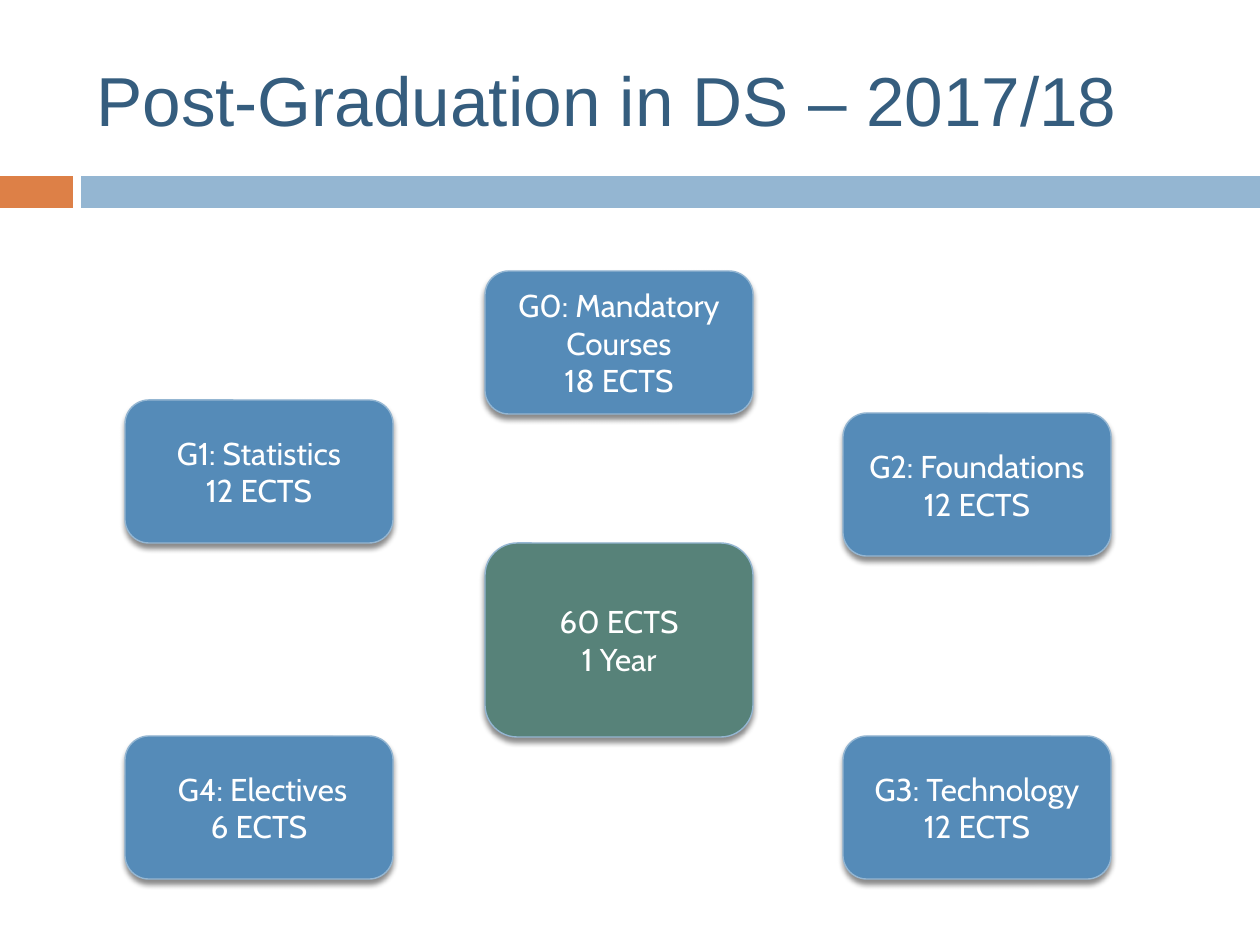
import lxml.etree
import pptx
import pptx.dml.color
import pptx.enum.shapes
import pptx.enum.text
import pptx.oxml.ns
import pptx.util

PX = 914400 / 126
SLIDE_SIZE = (1260, 945)

TITLE = "Post-Graduation in DS – 2017/18"
TITLE_BOX = (84, 31, 1124, 136)
HEADER_BARS = [
    ((0, 176, 73, 32), "DD8047"),
    ((81, 176, 1179, 32), "94B6D2"),
]

LEFT, MIDDLE, RIGHT = 125, 485, 843
CARD_WIDTH, GROUP_HEIGHT, TOTAL_HEIGHT = 268, 143, 194
GROUP_FILL, TOTAL_FILL, CARD_LINE = "558BB8", "578279", "94B6D2"

TOTAL = (["60 ECTS", "1 Year"], MIDDLE, 543)
GROUPS = [
    (["G0: Mandatory Courses", "18 ECTS"], MIDDLE, 271),
    (["G1: Statistics", "12 ECTS"], LEFT, 400),
    (["G2: Foundations", "12 ECTS"], RIGHT, 413),
    (["G3: Technology", "12 ECTS"], RIGHT, 736),
    ([" G4: Electives", "6 ECTS"], LEFT, 736),
]


def px(length):
    return pptx.util.Emu(round(length * PX))


def rgb(color):
    return pptx.dml.color.RGBColor.from_string(color)


def write(shape, lines, font, size, color, align):
    """Fill a shape with one paragraph per line, centred vertically."""
    frame = shape.text_frame
    frame.word_wrap = True
    frame.vertical_anchor = pptx.enum.text.MSO_ANCHOR.MIDDLE
    for index, line in enumerate(lines):
        paragraph = frame.paragraphs[0] if index == 0 else frame.add_paragraph()
        paragraph.alignment = align
        run = paragraph.add_run()
        run.text = line
        run.font.name = font
        run.font.size = pptx.util.Pt(size)
        run.font.color.rgb = rgb(color)


def add_block(slide, kind, box, fill):
    """Add a filled preset shape without outline or shadow."""
    block = slide.shapes.add_shape(kind, *map(px, box))
    block.shadow.inherit = False
    block.fill.solid()
    block.fill.fore_color.rgb = rgb(fill)
    block.line.fill.background()
    return block


def drop_shadow(shape):
    qn = pptx.oxml.ns.qn
    effects = shape.element.spPr.find(qn("a:effectLst"))
    shadow = lxml.etree.SubElement(
        effects, qn("a:outerShdw"),
        blurRad=str(pptx.util.Pt(3)), dist=str(pptx.util.Pt(2.4)),
        dir="5400000", rotWithShape="0")
    black = lxml.etree.SubElement(shadow, qn("a:srgbClr"), val="000000")
    lxml.etree.SubElement(black, qn("a:alpha"), val="45000")


def add_card(slide, lines, left, top, height, fill):
    card = add_block(slide, pptx.enum.shapes.MSO_SHAPE.ROUNDED_RECTANGLE,
                     (left, top, CARD_WIDTH, height), fill)
    card.line.color.rgb = rgb(CARD_LINE)
    card.line.width = pptx.util.Pt(0.79)
    drop_shadow(card)
    write(card, lines, font="Cabin", size=18, color="FFFFFF",
          align=pptx.enum.text.PP_ALIGN.CENTER)


def main():
    deck = pptx.Presentation()
    deck.slide_width, deck.slide_height = map(px, SLIDE_SIZE)
    slide = deck.slides.add_slide(deck.slide_layouts[6])

    for box, fill in HEADER_BARS:
        add_block(slide, pptx.enum.shapes.MSO_SHAPE.RECTANGLE, box, fill)

    title = slide.shapes.add_textbox(*map(px, TITLE_BOX))
    write(title, [TITLE], font="Arial", size=39.6, color="355D7E",
          align=pptx.enum.text.PP_ALIGN.LEFT)

    add_card(slide, *TOTAL, TOTAL_HEIGHT, TOTAL_FILL)
    for group in GROUPS:
        add_card(slide, *group, GROUP_HEIGHT, GROUP_FILL)

    deck.save("out.pptx")


if __name__ == "__main__":
    main()
